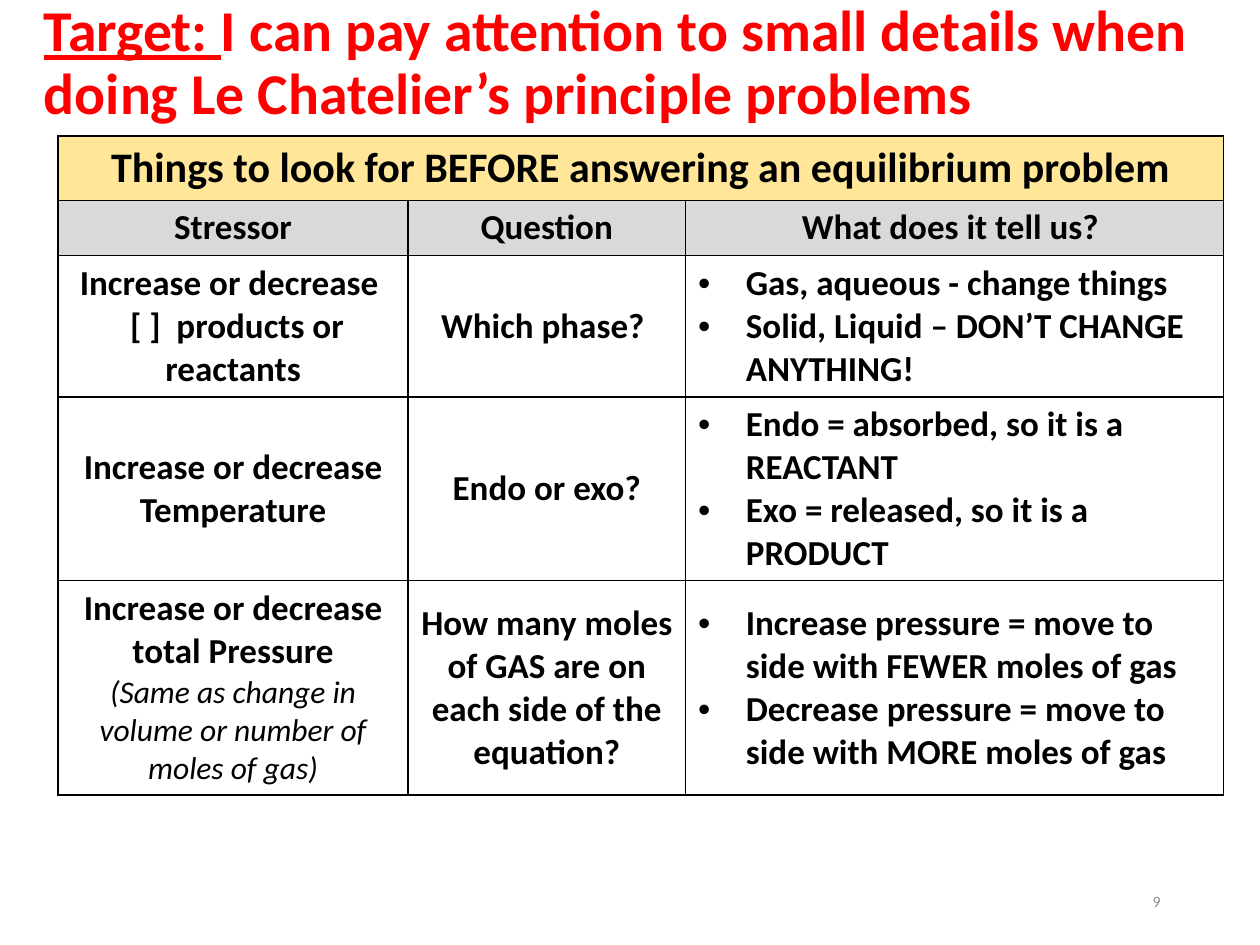
"""Build a slide with a checklist table for equilibrium problems."""
import pptx
import pptx.dml.color
import pptx.enum.text
import pptx.oxml
import pptx.oxml.ns
import pptx.util

Inches = pptx.util.Inches
Pt = pptx.util.Pt
ALIGN = pptx.enum.text.PP_ALIGN
ANCHOR = pptx.enum.text.MSO_ANCHOR

COLORS = {
    "title": "FF0000",
    "text": "000000",
    "banner": "FFE699",
    "header": "D9D9D9",
    "number": "8C8C8C",
}
FONT = "Calibri"
COLUMN_WIDTHS = [2.78, 2.2, 4.27]
ROW_HEIGHTS = [0.51, 0.44, 1.12, 1.46, 1.7]
BANNER = "Things to look for BEFORE answering an equilibrium problem"
HEADERS = ["Stressor", "Question", "What does it tell us? "]
STRESSORS = [
    (
        ["Increase or decrease \n [ ]  products or reactants"],
        "Which phase? ",
        ["Gas, aqueous - change things", "Solid, Liquid – DON’T CHANGE ANYTHING!"],
    ),
    (
        ["Increase or decrease Temperature"],
        "Endo or exo?",
        ["Endo = absorbed, so it is a REACTANT", "Exo = released, so it is a PRODUCT"],
    ),
    (
        [
            "Increase or decrease total Pressure",
            "(Same as change in volume or number of moles of gas)",
        ],
        "How many moles of GAS are on each side of the equation?",
        [
            "Increase pressure = move to side with FEWER moles of gas",
            "Decrease pressure = move to side with MORE moles of gas",
        ],
    ),
]


def rgb(name):
    return pptx.dml.color.RGBColor.from_string(COLORS[name])


def add_run(paragraph, text, size, color="text", bold=True, italic=False, underline=False):
    for index, line in enumerate(text.split("\n")):
        if index:
            paragraph.add_line_break()
        run = paragraph.add_run()
        run.text = line
        run.font.name = FONT
        run.font.size = Pt(size)
        run.font.bold = bold
        run.font.italic = italic
        run.font.underline = underline
        run.font.color.rgb = rgb(color)


def add_text_box(slide, left, top, width, height):
    frame = slide.shapes.add_textbox(
        Inches(left), Inches(top), Inches(width), Inches(height)
    ).text_frame
    frame.word_wrap = True
    frame.vertical_anchor = ANCHOR.MIDDLE
    return frame.paragraphs[0]


def add_title(slide):
    paragraph = add_text_box(slide, 0.25, -0.21, 9.75, 1.44)
    paragraph.line_spacing = 0.9
    add_run(paragraph, "Target: ", 33, "title", underline=True)
    add_run(
        paragraph,
        "I can pay attention to small details when doing Le Chatelier’s principle problems",
        33,
        "title",
    )


def add_slide_number(slide):
    paragraph = add_text_box(slide, 7.06, 6.95, 2.25, 0.4)
    paragraph.alignment = ALIGN.RIGHT
    add_run(paragraph, "9", 9, "number", bold=False)


def add_bullet(paragraph):
    properties = paragraph._p.get_or_add_pPr()
    properties.set("marL", str(Inches(0.38)))
    properties.set("indent", str(-Inches(0.38)))
    namespace = pptx.oxml.ns.nsdecls("a")
    properties.append(pptx.oxml.parse_xml(f'<a:buFont {namespace} typeface="Arial"/>'))
    properties.append(pptx.oxml.parse_xml(f'<a:buChar {namespace} char="•"/>'))


def style_cell(cell, fill=None):
    properties = cell._tc.get_or_add_tcPr()
    for side in ("lnL", "lnR", "lnT", "lnB"):
        properties.append(pptx.oxml.parse_xml(
            f'<a:{side} {pptx.oxml.ns.nsdecls("a")} w="{Pt(1)}"><a:solidFill>'
            f'<a:srgbClr val="{COLORS["text"]}"/></a:solidFill></a:{side}>'
        ))
    if fill:
        cell.fill.solid()
        cell.fill.fore_color.rgb = rgb(fill)
    else:
        cell.fill.background()
    cell.vertical_anchor = ANCHOR.MIDDLE


def fill_cell(cell, lines, size=20, bulleted=False):
    frame = cell.text_frame
    for index, line in enumerate(lines):
        paragraph = frame.add_paragraph() if index else frame.paragraphs[0]
        if bulleted:
            add_bullet(paragraph)
        else:
            paragraph.alignment = ALIGN.CENTER
        is_note = index > 0 and not bulleted
        add_run(paragraph, line, 18 if is_note else size, bold=not is_note, italic=is_note)


def add_checklist(slide):
    table = slide.shapes.add_table(
        len(ROW_HEIGHTS), len(COLUMN_WIDTHS),
        Inches(0.46), Inches(1.08), Inches(sum(COLUMN_WIDTHS)), Inches(sum(ROW_HEIGHTS)),
    ).table
    table.first_row = False
    table.horz_banding = False
    for column, width in zip(table.columns, COLUMN_WIDTHS):
        column.width = Inches(width)
    for index, (row, height) in enumerate(zip(table.rows, ROW_HEIGHTS)):
        row.height = Inches(height)
        for cell in row.cells:
            style_cell(cell, {0: "banner", 1: "header"}.get(index))
    table.cell(0, 0).merge(table.cell(0, 2))
    fill_cell(table.cell(0, 0), [BANNER], 24)
    for column, header in enumerate(HEADERS):
        fill_cell(table.cell(1, column), [header])
    for row, (stressor, question, answers) in enumerate(STRESSORS, start=2):
        fill_cell(table.cell(row, 0), stressor)
        fill_cell(table.cell(row, 1), [question])
        fill_cell(table.cell(row, 2), answers, bulleted=True)


def main():
    presentation = pptx.Presentation()
    presentation.slide_width = Inches(10)
    presentation.slide_height = Inches(7.5)
    slide = presentation.slides.add_slide(presentation.slide_layouts[6])
    add_title(slide)
    add_checklist(slide)
    add_slide_number(slide)
    presentation.save("out.pptx")


if __name__ == "__main__":
    main()
